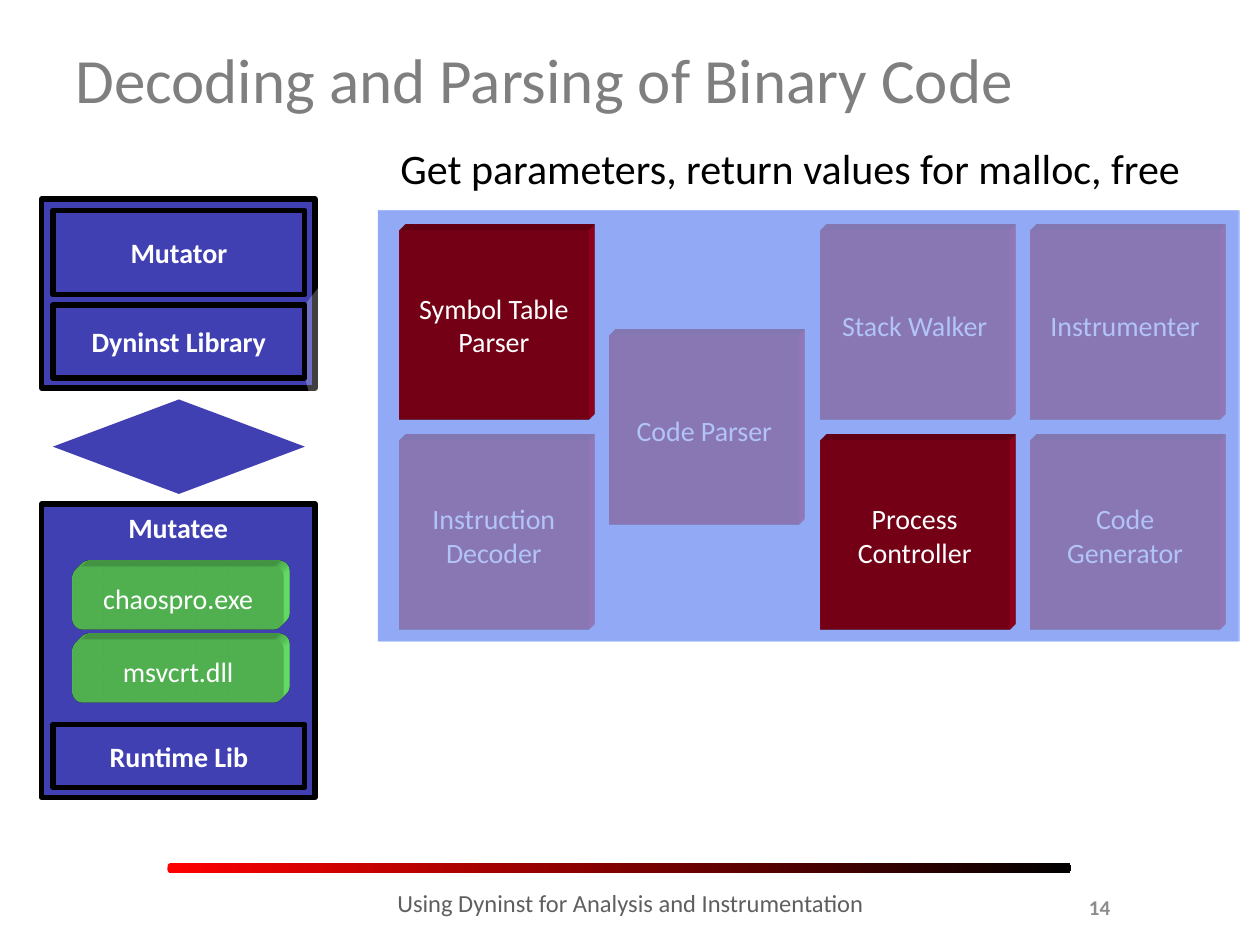
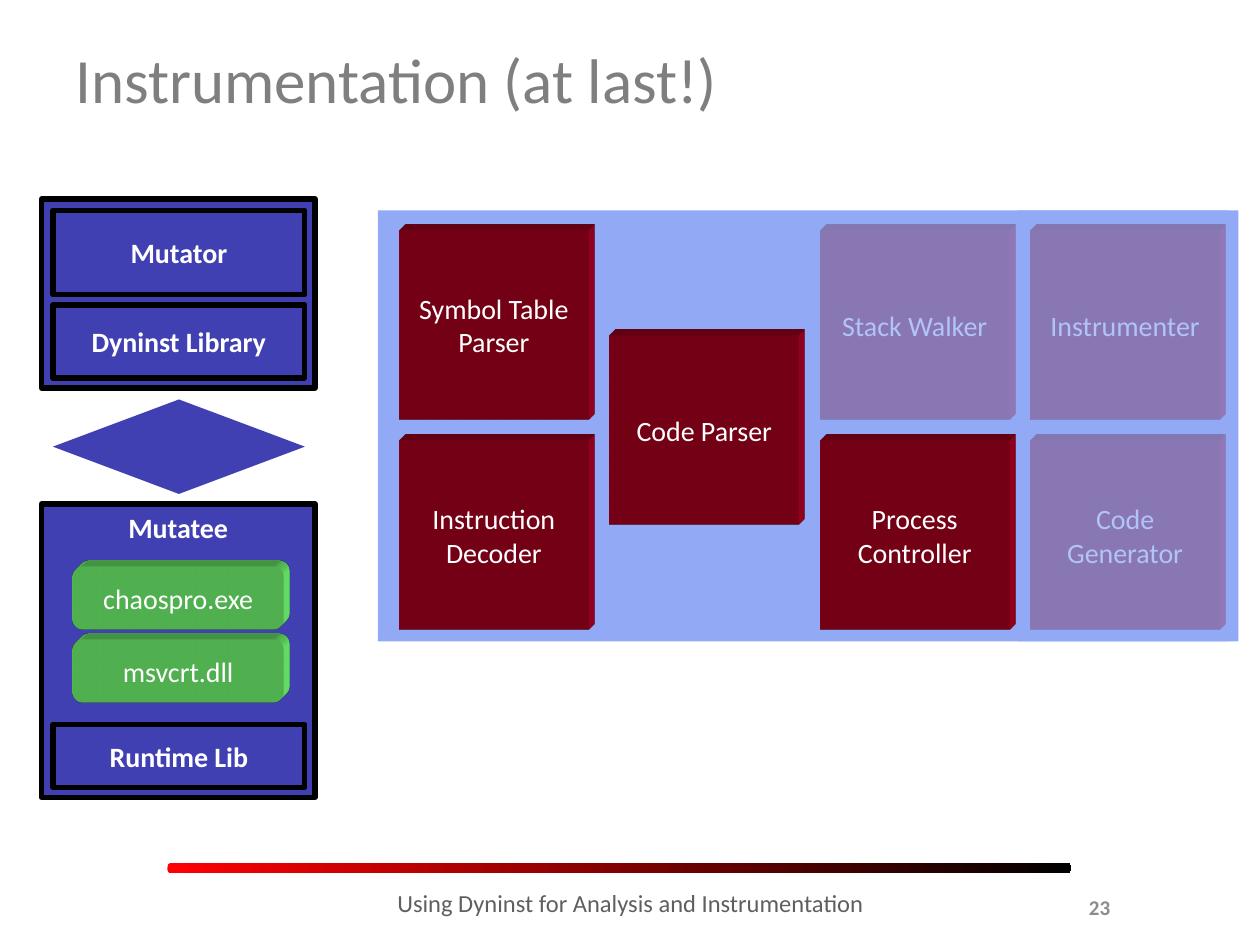
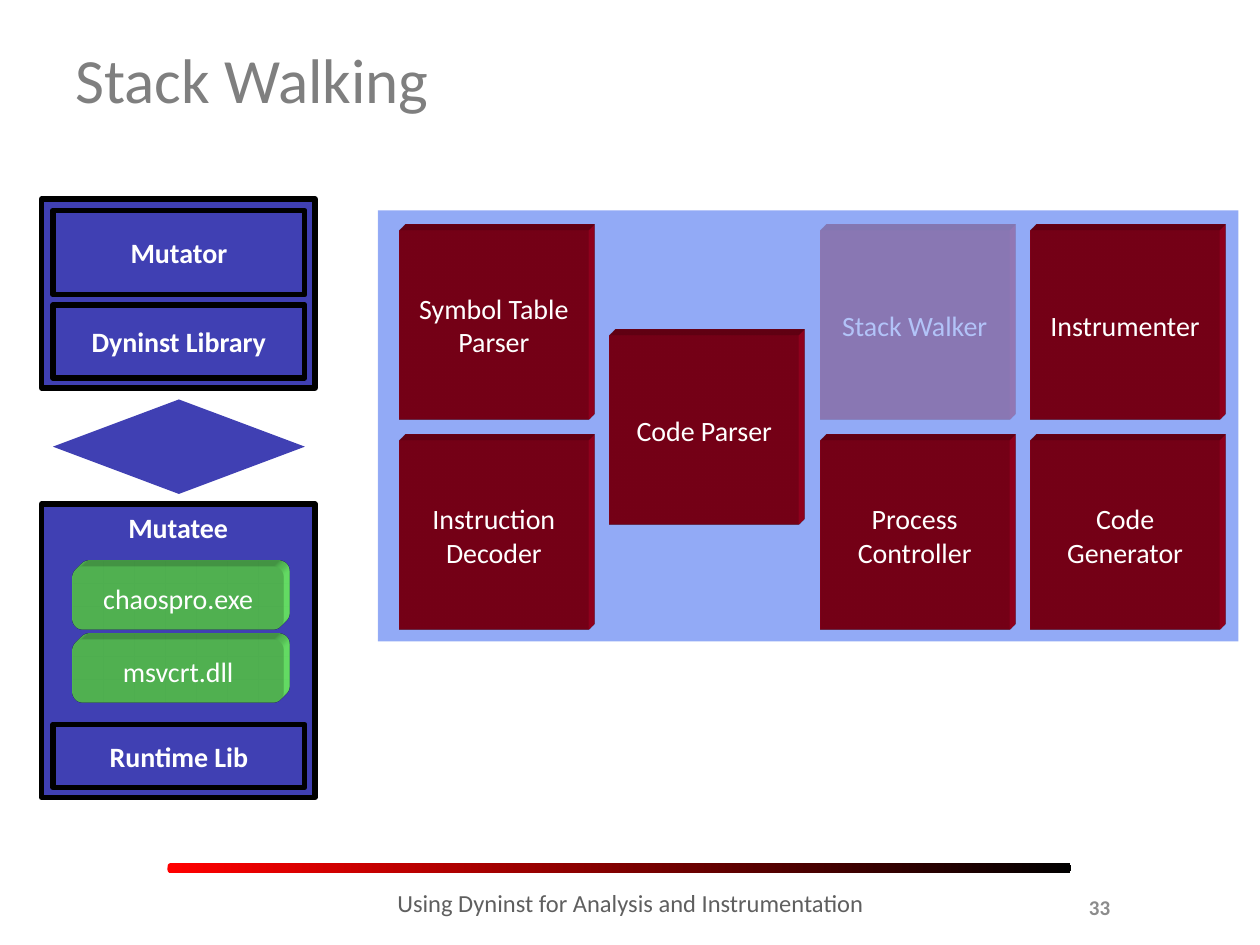
from lxml import etree
from pptx import Presentation
from pptx.dml.color import RGBColor
from pptx.enum.shapes import MSO_SHAPE
from pptx.enum.text import MSO_ANCHOR, PP_ALIGN
from pptx.oxml import parse_xml
from pptx.oxml.ns import nsdecls, qn
from pptx.util import Inches, Pt

RECTANGLE = MSO_SHAPE.RECTANGLE
ROUNDED = MSO_SHAPE.ROUNDED_RECTANGLE
UP_DOWN_ARROW = MSO_SHAPE.UP_DOWN_ARROW
TOP, MIDDLE = MSO_ANCHOR.TOP, MSO_ANCHOR.MIDDLE
LEFT, CENTER, RIGHT = PP_ALIGN.LEFT, PP_ALIGN.CENTER, PP_ALIGN.RIGHT

FONT = "Calibri"
WHITE = RGBColor(0xFF, 0xFF, 0xFF)
BLACK = RGBColor(0x00, 0x00, 0x00)
RED = RGBColor(0xFF, 0x00, 0x00)
TITLE_GRAY = RGBColor(0x7F, 0x7F, 0x7F)
FOOTER_GRAY = RGBColor(0x5F, 0x5F, 0x5F)
NUMBER_GRAY = RGBColor(0x8C, 0x8C, 0x8C)
PROCESS_BLUE = RGBColor(0x40, 0x40, 0xB3)
PANEL_BLUE = RGBColor(0x92, 0xAA, 0xF6)
COMPONENT_RED = RGBColor(0xA5, 0x00, 0x21)
FILE_GREEN = RGBColor(0x71, 0xF9, 0x71)

FOOTER = "Using Dyninst for Analysis and Instrumentation"

# Each veil is left, top, width, height; it dims the components it covers.
STACK_WALKER_VEIL = (6.42, 1.75, 1.71, 1.67)
SLIDES = [
    {
        "title": "Decoding and Parsing of Binary Code",
        "number": 14,
        "task": "Get parameters, return values for malloc, free",
        "lit": {"Symbol Table Parser", "Process Controller"},
        "veils": [(6.42, 1.67, 3.42, 3.42), (3, 1.67, 3.42, 3.42)],
        "beam_over_mutator": True,
    },
    {
        "title": "Instrumentation (at last!)",
        "number": 23,
        "lit": {"Symbol Table Parser", "Process Controller",
                "Code Parser", "Instruction Decoder"},
        "veils": [(8.08, 1.67, 1.67, 3.42), STACK_WALKER_VEIL],
    },
    {
        "title": "Stack Walking",
        "number": 33,
        "lit": {"Symbol Table Parser", "Process Controller", "Code Parser",
                "Instruction Decoder", "Instrumenter", "Code Generator"},
        "veils": [STACK_WALKER_VEIL],
    },
]

# Component name, grid column, grid row (half rows are centred between two).
COMPONENTS = [
    ("Code Generator", 3, 1),
    ("Instrumenter", 3, 0),
    ("Stack Walker", 2, 0),
    ("Code Parser", 1, 0.5),
    ("Instruction Decoder", 0, 1),
    ("Process Controller", 2, 1),
    ("Symbol Table Parser", 0, 0),
]
GRID_LEFT, GRID_TOP, GRID_STEP, COMPONENT_SIZE = 3.17, 1.83, 1.67, 1.5

# Text, top, height
LIBRARY_BOXES = [
    ("Mutator", 1.67, 0.67),
    ("Dyninst Library", 2.42, 0.58),
    ("Runtime Lib", 5.75, 0.5),
]
FILES = [("chaospro.exe", 4.5), ("msvcrt.dll", 5.08)]
MUTATOR_PANEL = (0.33, 1.58, 2.17, 1.5)
MUTATEE_PANEL = (0.33, 4, 2.17, 2.33)
COMPONENT_PANEL = (3, 1.67, 6.83, 3.42)
BEAM = [(3, 1.67), (2.42, 2.42), (2.42, 3), (3, 5.08)]


def write(shape, text, size, color, align=CENTER, anchor=MIDDLE, bold=False):
    frame = shape.text_frame
    frame.word_wrap = True
    frame.vertical_anchor = anchor
    paragraph = frame.paragraphs[0]
    paragraph.alignment = align
    run = paragraph.add_run()
    run.text = text
    run.font.name = FONT
    run.font.size = Pt(size)
    run.font.bold = bold
    run.font.color.rgb = color


def add_text(slide, box, text, size, color, **style):
    shape = slide.shapes.add_textbox(*map(Inches, box))
    write(shape, text, size, color, **style)


def paint(shape, color, opacity=100, outlined=False):
    shape.shadow.inherit = False
    shape.fill.solid()
    shape.fill.fore_color.rgb = color
    if opacity < 100:
        color_element = shape.fill._xPr.find(qn("a:solidFill"))[0]
        etree.SubElement(color_element, qn("a:alpha"), val=str(opacity * 1000))
    if outlined:
        shape.line.color.rgb = BLACK
        shape.line.width = Pt(3)
    else:
        shape.line.fill.background()


def add_block(slide, kind, box, color, **style):
    shape = slide.shapes.add_shape(kind, *map(Inches, box))
    paint(shape, color, **style)
    return shape


def extrude(shape, color):
    """Give the shape a shallow depth towards the top right."""
    properties = shape._element.spPr
    properties.append(parse_xml(
        f'<a:scene3d {nsdecls("a")}><a:camera prst="legacyObliqueTopRight"/>'
        '<a:lightRig rig="legacyFlat3" dir="b"/></a:scene3d>'))
    properties.append(parse_xml(
        f'<a:sp3d {nsdecls("a")} extrusionH="125400" prstMaterial="legacyMatte">'
        '<a:bevelT w="13500" h="13500" prst="angle"/>'
        '<a:bevelB w="13500" h="13500" prst="angle"/>'
        f'<a:extrusionClr><a:srgbClr val="{color}"/></a:extrusionClr></a:sp3d>'))


def add_frame(slide, content):
    bar = add_block(slide, ROUNDED, (1.33, 6.85, 7.17, 0.08), RED)
    bar.adjustments[0] = 0.33
    bar.fill.gradient()
    bar.fill.gradient_angle = 0
    for stop, color in zip(bar.fill.gradient_stops, (RED, BLACK)):
        stop.color.rgb = color
    add_text(slide, (0.5, 0, 9, 1.25), content["title"], 36, TITLE_GRAY, align=LEFT)
    add_text(slide, (2.42, 7, 5.17, 0.4), FOOTER, 14, FOOTER_GRAY, anchor=TOP)
    add_text(slide, (7.58, 7, 1.33, 0.4), str(content["number"]), 12, NUMBER_GRAY,
             align=RIGHT, bold=True)


def add_mutator_panel(slide):
    add_block(slide, RECTANGLE, MUTATOR_PANEL, PROCESS_BLUE, outlined=True)


def add_component_panel(slide):
    add_block(slide, RECTANGLE, COMPONENT_PANEL, PANEL_BLUE)
    points = [(Inches(x), Inches(y)) for x, y in BEAM]
    builder = slide.shapes.build_freeform(*points[0])
    builder.add_line_segments(points[1:], close=True)
    paint(builder.convert_to_shape(), WHITE, opacity=25)


def add_processes(slide):
    mutatee = add_block(slide, RECTANGLE, MUTATEE_PANEL, PROCESS_BLUE, outlined=True)
    write(mutatee, "Mutatee", 16, WHITE, anchor=TOP, bold=True)
    arrow = add_block(slide, UP_DOWN_ARROW, (0.42, 3.17, 2, 0.75), PROCESS_BLUE)
    arrow.adjustments[0], arrow.adjustments[1] = 0.76, 0.34
    for text, top, height in LIBRARY_BOXES:
        box = add_block(slide, RECTANGLE, (0.42, top, 2, height), PROCESS_BLUE,
                        outlined=True)
        write(box, text, 16, WHITE, bold=True)
    for text, top in FILES:
        file_box = add_block(slide, ROUNDED, (0.58, top, 1.67, 0.5), FILE_GREEN)
        write(file_box, text, 16, WHITE)
        extrude(file_box, FILE_GREEN)


def add_components(slide, names):
    for name, column, row in COMPONENTS:
        if name in names:
            box = (GRID_LEFT + column * GRID_STEP, GRID_TOP + row * GRID_STEP,
                   COMPONENT_SIZE, COMPONENT_SIZE)
            component = add_block(slide, RECTANGLE, box, COMPONENT_RED)
            write(component, name, 16, WHITE)
            extrude(component, COMPONENT_RED)


def build_slide(presentation, content):
    slide = presentation.slides.add_slide(presentation.slide_layouts[6])
    add_frame(slide, content)
    panels = [add_component_panel, add_mutator_panel]
    if content.get("beam_over_mutator"):
        panels.reverse()
    for add_panel in panels:
        add_panel(slide)
    add_processes(slide)

    dimmed = {name for name, _, _ in COMPONENTS} - content["lit"]
    add_components(slide, dimmed)
    for veil in content["veils"]:
        add_block(slide, RECTANGLE, veil, PANEL_BLUE, opacity=70)
    add_components(slide, content["lit"])
    if "task" in content:
        add_text(slide, (3.08, 1.08, 6.5, 0.51), content["task"], 24, BLACK,
                 align=LEFT, anchor=TOP)


def main():
    presentation = Presentation()
    presentation.slide_width = Inches(10)
    presentation.slide_height = Inches(7.5)
    for content in SLIDES:
        build_slide(presentation, content)
    presentation.save("out.pptx")


if __name__ == "__main__":
    main()
